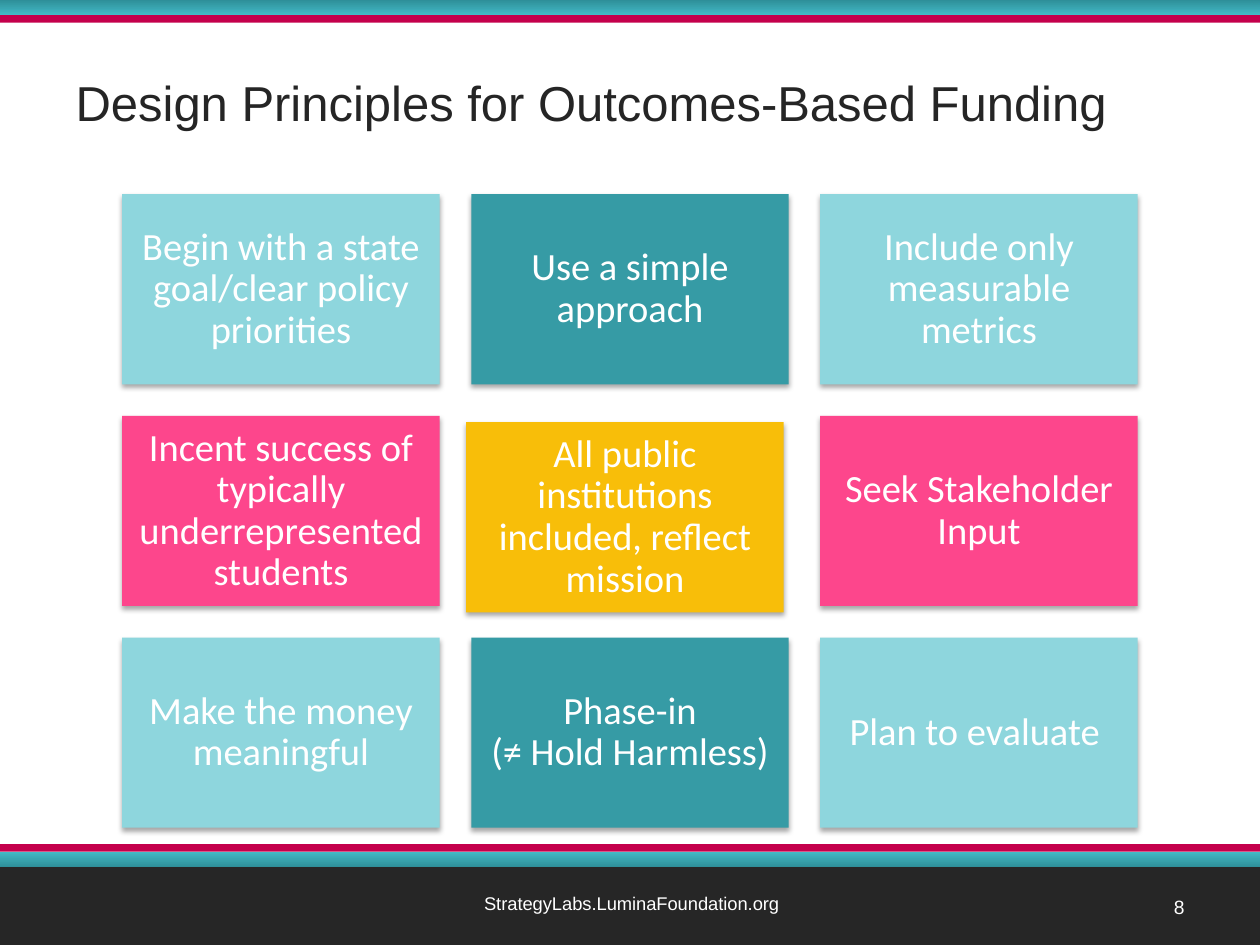
from dataclasses import dataclass

from lxml import etree
from pptx import Presentation, util as u
from pptx.dml.color import RGBColor
from pptx.enum import shapes, text
from pptx.oxml import ns

WIDTH, HEIGHT = 10, 7.5


@dataclass(frozen=True)
class Theme:
    # Colours
    white: str = "FFFFFF"
    ink: str = "252525"
    footer: str = "262626"
    crimson: str = "C4004C"
    teal_dark: str = "2E8F99"
    teal_light: str = "43BAC6"
    aqua: str = "8ED6DD"
    teal: str = "369BA5"
    pink: str = "FD468C"
    gold: str = "F8BE09"
    # Fonts and type sizes
    main_font: str = "Arial"
    tile_font: str = "Calibri"
    title_size: float = 28
    tile_size: float = 22
    address_size: float = 10.5
    number_size: float = 11


@dataclass(frozen=True)
class Grid:
    left: float = 0.97
    top: float = 1.54
    width: float = 2.52
    height: float = 1.51
    col_step: float = 2.77
    row_step: float = 1.76

    def cell(self, col, row):
        return (self.left + col * self.col_step, self.top + row * self.row_step,
                self.width, self.height)


class Deck:
    def __init__(self, theme, grid):
        self.theme, self.grid = theme, grid
        self.prs = Presentation()
        self.prs.slide_width, self.prs.slide_height = u.Inches(WIDTH), u.Inches(HEIGHT)
        self.s = self.prs.slides.add_slide(self.prs.slide_layouts[5])

    def add_text(self, tf, words, size, font, color, align, anchor):
        tf.word_wrap = True
        tf.auto_size = text.MSO_AUTO_SIZE.NONE
        tf.vertical_anchor = anchor
        p = tf.paragraphs[0]
        p.alignment = align
        for i, line in enumerate(words.split("\n")):
            if i:
                p.add_line_break()
            r = p.add_run()
            r.text = line
            r.font.size, r.font.name = u.Pt(size), font
            r.font.color.rgb = RGBColor.from_string(color)
        return p

    def rect(self, box, color):
        sp = self.s.shapes.add_shape(shapes.MSO_SHAPE.RECTANGLE, *map(u.Inches, box))
        sp.shadow.inherit = False
        sp.line.fill.background()
        sp.fill.solid()
        sp.fill.fore_color.rgb = RGBColor.from_string(color)
        return sp

    def band(self, top, height, color):
        """Full-width stripe; top and height are in inches."""
        return self.rect((0, top, WIDTH, height), color)

    def gradient_band(self, top, height, angle):
        fill = self.band(top, height, self.theme.teal_dark).fill
        fill.gradient()
        fill.gradient_angle = angle
        for stop, color in zip(fill.gradient_stops,
                               (self.theme.teal_dark, self.theme.teal_light)):
            stop.color.rgb = RGBColor.from_string(color)

    def title(self, words, box):
        sp = self.s.shapes.title
        sp.left, sp.top, sp.width, sp.height = map(u.Inches, box)
        self.add_text(sp.text_frame, words, self.theme.title_size, self.theme.main_font,
                      self.theme.ink, text.PP_ALIGN.LEFT, text.MSO_ANCHOR.MIDDLE)

    def label(self, words, box, size, align):
        sp = self.s.shapes.add_textbox(*map(u.Inches, box))
        self.add_text(sp.text_frame, words, size, self.theme.main_font,
                      self.theme.white, align, text.MSO_ANCHOR.TOP)

    def soft_shadow(self, sp):
        effects = sp._element.spPr.find(ns.qn("a:effectLst"))
        shadow = etree.SubElement(effects, ns.qn("a:outerShdw"), blurRad=str(u.Pt(3.1)),
                                  dist=str(u.Pt(1.8)), dir="5400000", rotWithShape="0")
        color = etree.SubElement(shadow, ns.qn("a:srgbClr"), val="000000")
        etree.SubElement(color, ns.qn("a:alpha"), val="35000")

    def tile(self, col, row, words, color, shift=(0, 0), indent=0):
        left, top, width, height = self.grid.cell(col, row)
        sp = self.rect((left + shift[0], top + shift[1], width, height), color)
        self.soft_shadow(sp)
        tf = sp.text_frame
        tf.margin_left = tf.margin_right = tf.margin_top = tf.margin_bottom = u.Inches(0.09)
        p = self.add_text(tf, words, self.theme.tile_size, self.theme.tile_font,
                          self.theme.white, text.PP_ALIGN.CENTER, text.MSO_ANCHOR.MIDDLE)
        p.line_spacing = 0.9
        if indent:
            p._p.get_or_add_pPr().set("indent", str(u.Inches(indent)))


def main():
    theme = Theme()
    deck = Deck(theme, Grid())

    # Footer and header bands
    deck.band(6.88, 0.62, theme.footer)
    deck.gradient_band(6.76, 0.12, 90)
    deck.band(6.7, 0.06, theme.crimson)
    deck.gradient_band(0, 0.12, 270)
    deck.band(0.12, 0.06, theme.crimson)

    # Title and footer text
    deck.title("Design Principles for Outcomes-Based Funding", (0.5, 0.34, 9, 0.94))
    deck.label("StrategyLabs.LuminaFoundation.org", (3.01, 7.03, 4.01, 0.29),
               theme.address_size, text.PP_ALIGN.CENTER)
    deck.label("8", (7.17, 7.06, 2.33, 0.4), theme.number_size, text.PP_ALIGN.RIGHT)

    # Principles, row by row; the centre tile sits slightly off the grid
    outer = (theme.aqua, theme.teal, theme.aqua)
    middle = (theme.pink, theme.gold, theme.pink)
    principles = (
        (outer, ("Begin with a state goal/clear policy priorities",
                 "Use a simple approach",
                 "Include only measurable metrics")),
        (middle, ("Incent success of typically underrepresented students",
                  "All public institutions included, reflect mission",
                  "Seek Stakeholder Input")),
        (outer, ("Make the money meaningful",
                 "Phase-in\n(≠ Hold Harmless)",
                 "Plan to evaluate ")),
    )
    adjustments = {(1, 1): {"shift": (-0.04, 0.05)}, (1, 2): {"indent": -0.36}}
    for row, (colors, phrases) in enumerate(principles):
        for col, (color, words) in enumerate(zip(colors, phrases)):
            deck.tile(col, row, words, color, **adjustments.get((col, row), {}))

    deck.prs.save("out.pptx")


if __name__ == "__main__":
    main()
